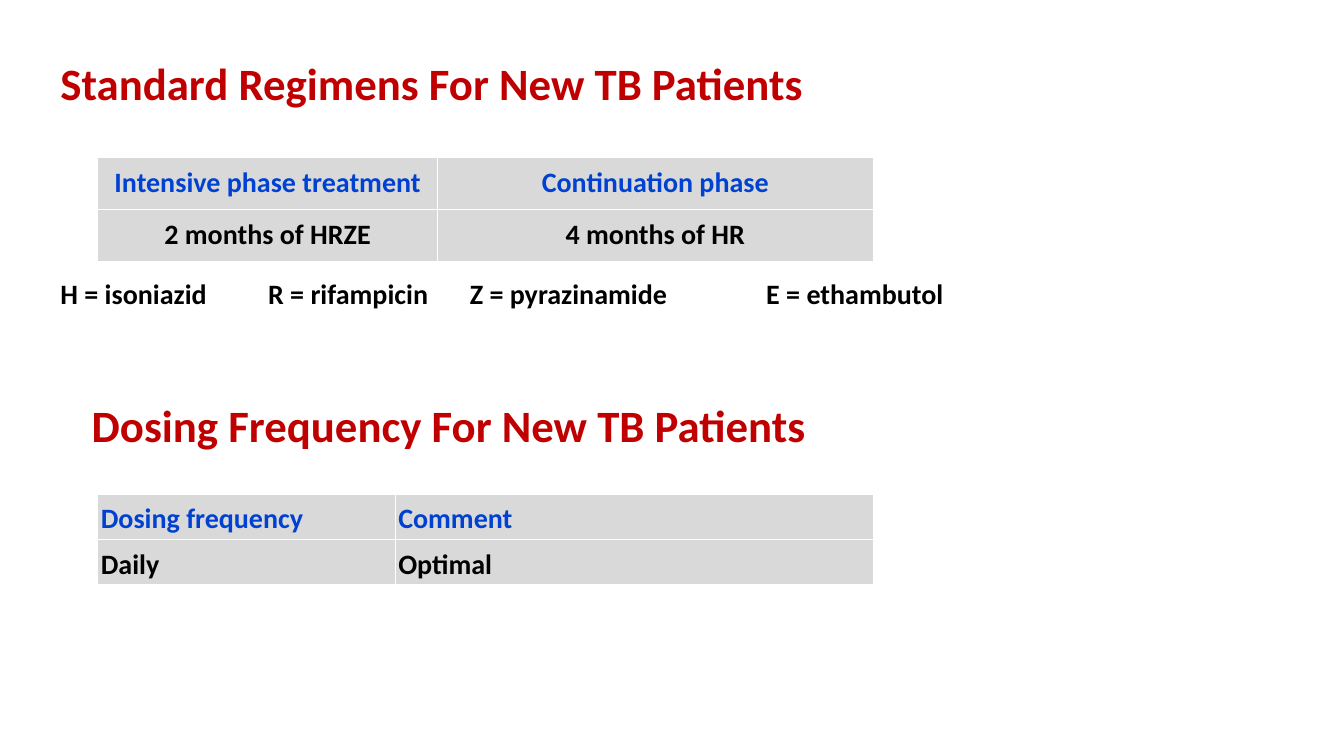
from lxml import etree
from pptx import Presentation
from pptx.dml.color import RGBColor
from pptx.enum.text import PP_ALIGN
from pptx.oxml.ns import qn
from pptx.util import Inches, Pt

LEFT, CENTER = PP_ALIGN.LEFT, PP_ALIGN.CENTER
RED, BLUE, BLACK, GRAY, WHITE = "C00000", "0041D2", "000000", "D9D9D9", "FFFFFF"
FONT = "Calibri"

HEADINGS = [
    ("Standard Regimens For New TB Patients", 0.6, 0.55),
    ("Dosing Frequency For New TB Patients", 0.91, 3.95),
]
DRUGS = ["H = isoniazid", "R = rifampicin", "Z = pyrazinamide", "E = ethambutol"]
DRUG_TABS = [2.06, 4.06, 7]
TABLE_LEFT = 0.97
TABLES = [
    {
        "rows": [("Intensive phase treatment", "Continuation phase"),
                 ("2 months of HRZE", "4 months of HR")],
        "top": 1.56, "widths": [3.37, 4.32], "row_height": 0.52, "alignment": CENTER,
    },
    {
        "rows": [("Dosing frequency", "Comment"), ("Daily", "Optimal")],
        "top": 4.9, "widths": [2.95, 4.74], "row_height": 0.45, "alignment": LEFT,
    },
]


def rgb(color):
    return RGBColor.from_string(color)


def style(paragraph, size, color):
    for run in paragraph.runs:
        run.font.name = FONT
        run.font.size = Pt(size)
        run.font.bold = True
        run.font.color.rgb = rgb(color)


def add_text(slide, text, left, top, width, height, size, color, tabs=()):
    shape = slide.shapes.add_textbox(Inches(left), Inches(top), Inches(width), Inches(height))
    frame = shape.text_frame
    frame.word_wrap = True
    frame.margin_left = frame.margin_right = frame.margin_top = frame.margin_bottom = 0
    frame.text = text
    paragraph = frame.paragraphs[0]
    if tabs:
        properties = paragraph._p.get_or_add_pPr()
        tab_list = etree.SubElement(properties, qn("a:tabLst"))
        for position in tabs:
            etree.SubElement(tab_list, qn("a:tab"), pos=str(Inches(position)), algn="l")
    style(paragraph, size, color)


def add_borders(cell):
    properties = cell._tc.get_or_add_tcPr()
    for index, side in enumerate(("lnL", "lnR", "lnT", "lnB")):
        line = etree.Element(qn(f"a:{side}"), w=str(Pt(1)))
        fill = etree.SubElement(line, qn("a:solidFill"))
        etree.SubElement(fill, qn("a:srgbClr"), val=WHITE)
        properties.insert(index, line)


def add_table(slide, rows, top, widths, row_height, alignment):
    table = slide.shapes.add_table(
        len(rows), len(widths), Inches(TABLE_LEFT), Inches(top),
        Inches(sum(widths)), Inches(row_height * len(rows))).table
    for column, width in zip(table.columns, widths):
        column.width = Inches(width)
    for row_index, texts in enumerate(rows):
        table.rows[row_index].height = Inches(row_height)
        for column_index, text in enumerate(texts):
            cell = table.cell(row_index, column_index)
            cell.margin_left = cell.margin_right = Inches(0.03)
            cell.margin_top = cell.margin_bottom = Inches(0.03)
            cell.fill.solid()
            cell.fill.fore_color.rgb = rgb(GRAY)
            add_borders(cell)
            cell.text_frame.text = text
            paragraph = cell.text_frame.paragraphs[0]
            paragraph.alignment = alignment
            paragraph.line_spacing = 1.15
            style(paragraph, 20, BLUE if row_index == 0 else BLACK)


def main():
    presentation = Presentation()
    presentation.slide_width = Inches(13.33)
    presentation.slide_height = Inches(7.5)
    slide = presentation.slides.add_slide(presentation.slide_layouts[6])
    for text, left, top in HEADINGS:
        add_text(slide, text, left, top, 10, 0.55, 32, RED)
    add_text(slide, "\t".join(DRUGS), 0.6, 2.74, 11, 0.35, 20, BLACK, DRUG_TABS)
    for table in TABLES:
        add_table(slide, **table)
    presentation.save("out.pptx")


if __name__ == "__main__":
    main()
